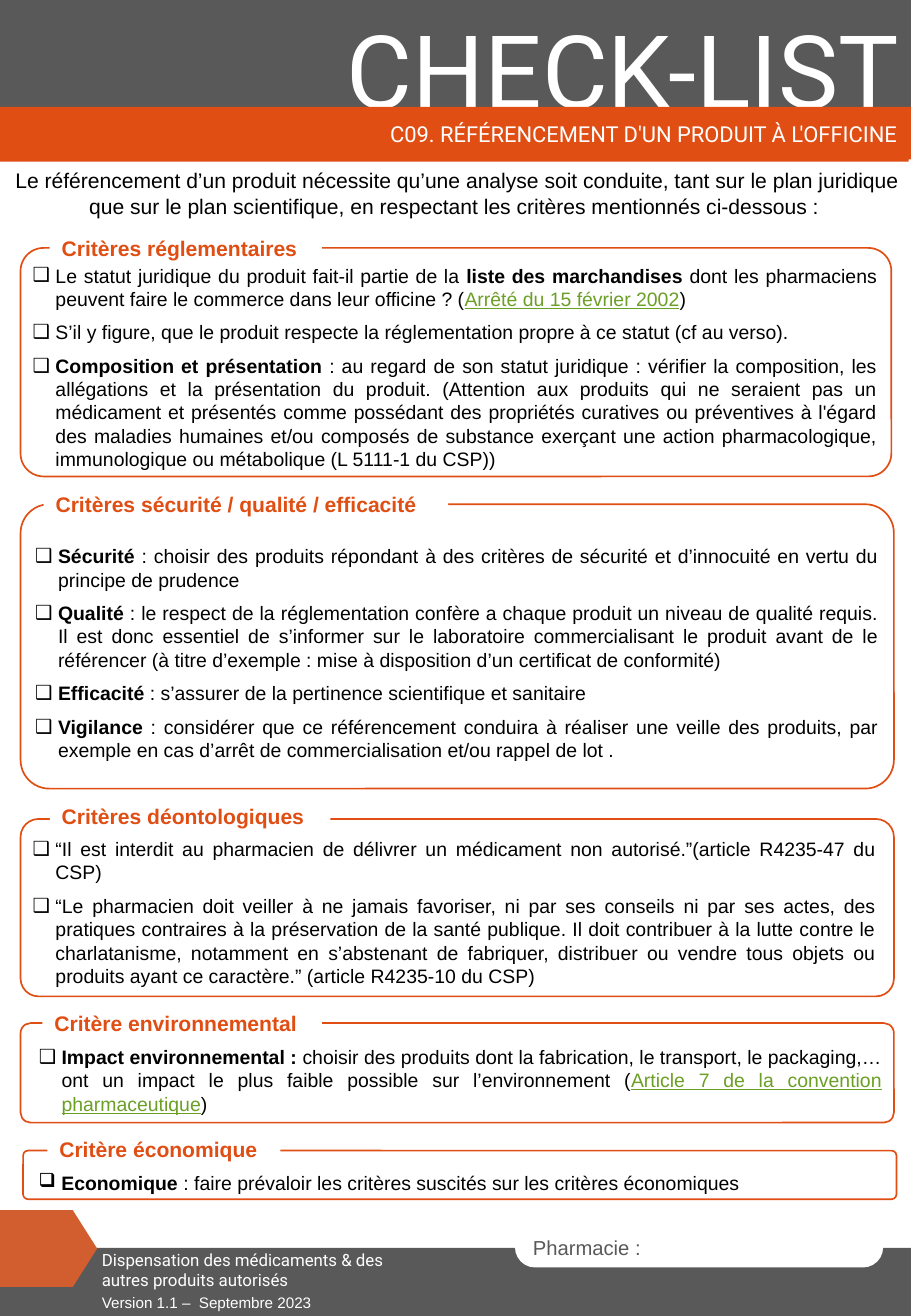
import pptx
import pptx.dml.color
import pptx.enum.shapes
import pptx.enum.text
import pptx.util
from pptx.oxml.xmlchemy import OxmlElement

Pt = pptx.util.Pt
SHAPE = pptx.enum.shapes.MSO_SHAPE
ALIGN = pptx.enum.text.PP_ALIGN
ANCHOR = pptx.enum.text.MSO_ANCHOR
COLORS = {"grey": "595959", "orange": "E04E13", "rust": "D25E2F",
          "white": "FFFFFF", "black": "000000", "green": "6B9F25"}
ITEM = {"name": "Arial", "size": Pt(11.5), "bold": False, "color": "black"}
FORMATS = {
    "plain": ITEM,
    "bold": {**ITEM, "bold": True},
    "link": {**ITEM, "underline": True, "color": "green"},
    "heading": {"name": "Arial", "size": Pt(12.5), "bold": True, "color": "orange"},
    "intro": {"name": "Arial", "size": Pt(12.5), "color": "black"},
    "banner": {"name": "Roboto", "size": Pt(60), "color": "white"},
    "title": {"name": "Roboto", "size": Pt(13), "bold": False, "color": "white"},
    "pharmacy": {"name": "Arial", "size": Pt(12), "color": "grey"},
    "theme": {"name": "Roboto", "size": Pt(10), "color": "white"},
    "version": {"name": "Arial", "size": Pt(9), "color": "white"},
}


def rgb(name):
    return pptx.dml.color.RGBColor.from_string(COLORS[name])


def add_run(p, text, style):
    """Append text to the paragraph in one of the FORMATS."""
    r = p.add_run()
    r.text = text
    for key, value in FORMATS[style].items():
        if key == "color":
            r.font.color.rgb = rgb(value)
        else:
            setattr(r.font, key, value)


prs = pptx.Presentation()
prs.slide_width, prs.slide_height = Pt(540), Pt(779.76)
s = prs.slides.add_slide(prs.slide_layouts.get_by_name("Comparison"))
title, *list_boxes = s.placeholders

# Header and footer blocks
blocks = [
    (SHAPE.RECTANGLE, (0, 739.4, 540, 40.36), "grey", None),
    (SHAPE.ROUNDED_RECTANGLE, (305.3, 727.2, 218.2, 23.8), "white", 0.5),
    (SHAPE.RECTANGLE, (0, 0, 540, 63.4), "grey", None),
    (SHAPE.PENTAGON, (0, 717.1, 57.6, 45.4), "rust", 0.317),
]
for kind, box, color, adjustment in blocks:
    sp = s.shapes.add_shape(kind, *map(Pt, box))
    sp.shadow.inherit = False
    sp.fill.solid()
    sp.fill.fore_color.rgb = rgb(color)
    sp.line.fill.background()
    if adjustment is not None:
        sp.adjustments[0] = adjustment
    if color == "white":
        p = sp.text_frame.paragraphs[0]
        p.alignment = ALIGN.LEFT
        add_run(p, "Pharmacie :", "pharmacy")

texts = [
    ("CHECK-LIST", "banner", (164.2, 0.7, 375.8, 79.9), ALIGN.RIGHT),
    ("Dispensation des médicaments & des autres produits autorisés", "theme",
     (53.3, 736.6, 182.2, 31.7), ALIGN.LEFT),
    ("Version 1.1 –  Septembre 2023", "version", (53.3, 762.5, 423.4, 18), ALIGN.LEFT),
    ("Le référencement d’un produit nécessite qu’une analyse soit conduite, tant sur le plan "
     "juridique que sur le plan scientifique, en respectant les critères mentionnés ci-dessous : ",
     "intro", (1.4, 95.8, 538.6, 38.9), ALIGN.CENTER),
]
for text, style, box, alignment in texts:
    sp = s.shapes.add_textbox(*map(Pt, box))
    tf = sp.text_frame
    tf.word_wrap = style != "banner"
    p = tf.paragraphs[0]
    p.alignment = alignment
    add_run(p, text, style)

# Title on its orange band, in front of the banner
band = s.shapes.add_shape(SHAPE.RECTANGLE, 0, Pt(63.4), Pt(540), Pt(31))
band.shadow.inherit = False
band.line.fill.background()
title.left, title.top, title.width, title.height = map(Pt, (0, 64.8, 538.6, 31))
title.element.getparent().append(title.element)
for sp in (band, title):
    sp.fill.solid()
    sp.fill.fore_color.rgb = rgb("orange")
tf = title.text_frame
tf.auto_size = pptx.enum.text.MSO_AUTO_SIZE.NONE
tf.vertical_anchor = ANCHOR.MIDDLE
p = tf.paragraphs[0]
p.alignment = ALIGN.RIGHT
p.line_spacing = 0.9
add_run(p, "C09. RÉFÉRENCEMENT D'UN PRODUIT À L'OFFICINE", "title")

# Each card: heading, heading (left, top, width), frame box, list box, items
cards = [
    ("Critères réglementaires", (29.5, 135.4, 161.3),
     (12.2, 146.9, 516.2, 135.4), (12.2, 152.6, 514.8, 135.4), [
        [("Le statut juridique du produit fait-il partie de la ", "plain"),
         ("liste des marchandises ", "bold"),
         ("dont les pharmaciens peuvent faire le commerce dans leur officine ? (", "plain"),
         ("Arrêté du 15 février 2002", "link"), (")", "plain")],
        [("S’il y figure, que le produit respecte la réglementation propre à ce statut "
          "(cf au verso).", "plain")],
        [("Composition et présentation", "bold"),
         (" : au regard de son statut juridique : vérifier la composition, les allégations et la "
          "présentation du produit. (Attention aux produits qui ne seraient pas un médicament et "
          "présentés comme possédant des propriétés curatives ou préventives à l'égard des "
          "maladies humaines et/ou composés de substance exerçant une action pharmacologique, "
          "immunologique ou métabolique (L 5111-1 du CSP))", "plain")]]),
    ("Critères sécurité / qualité / efficacité", (25.9, 287.3, 239.8),
     (12.2, 298.8, 517.7, 168.5), (13.7, 319, 514.1, 136.8), [
        [("Sécurité ", "bold"),
         (": choisir des produits répondant à des critères de sécurité et d’innocuité en vertu "
          "du principe de prudence", "plain")],
        [("Qualité", "bold"),
         (" : le respect de la réglementation confère a chaque produit un niveau de qualité "
          "requis. Il est donc essentiel de s’informer sur le laboratoire commercialisant le "
          "produit avant de le référencer (à titre d’exemple : mise à disposition d’un "
          "certificat de conformité)", "plain")],
        [("Efficacité ", "bold"),
         (": s’assurer de la pertinence scientifique et sanitaire", "plain")],
        [("Vigilance", "bold"),
         (" : considérer que ce référencement conduira à réaliser une veille des produits, par "
          "exemple en cas d’arrêt de commercialisation et/ou rappel de lot .", "plain")]]),
    ("Critères déontologiques", (29.5, 472.3, 166.3),
     (12.2, 485.3, 517.7, 105.1), (12.2, 492.5, 514.1, 100.8), [
        [("“Il est interdit au pharmacien de délivrer un médicament non autorisé.”"
          "(article R4235-47 du CSP) ", "plain")],
        [("“Le pharmacien doit veiller à ne jamais favoriser, ni par ses conseils ni par ses "
          "actes, des pratiques contraires à la préservation de la santé publique. Il doit "
          "contribuer à la lutte contre le charlatanisme, notamment en s’abstenant de fabriquer, "
          "distribuer ou vendre tous objets ou produits ayant ce caractère.” "
          "(article R4235-10 du CSP)", "plain")]]),
    ("Critère environnemental", (25.2, 594.7, 165.6),
     (12.2, 606.2, 517.7, 59), (15.8, 615.6, 514.1, 51.1), [
        [("Impact environnemental : ", "bold"),
         ("choisir des produits dont la fabrication, le transport, le packaging,… ont un impact "
          "le plus faible possible sur l’environnement (", "plain"),
         ("Article 7 de la convention pharmaceutique", "link"), (")", "plain")]]),
    ("Critère économique", (28.1, 669.6, 138.2),
     (13.7, 681.8, 517.7, 28.8), (15.8, 690.5, 514.1, 21.6), [
        [("Economique ", "bold"),
         (": faire prévaloir les critères suscités sur les critères économiques", "plain")]]),
]
# The layout holds four lists; the fifth takes a text box
list_boxes.append(s.shapes.add_textbox(0, 0, 0, 0))

for (heading, label_box, frame_box, list_box, items), body in zip(cards, list_boxes):
    frame = s.shapes.add_shape(SHAPE.ROUNDED_RECTANGLE, *map(Pt, frame_box))
    frame.shadow.inherit = False
    frame.adjustments[0] = 0.101
    frame.fill.background()
    frame.line.color.rgb = rgb("orange")
    frame.line.width = Pt(1)

    label = s.shapes.add_shape(SHAPE.RECTANGLE, *map(Pt, label_box), Pt(23))
    label.shadow.inherit = False
    label.fill.solid()
    label.fill.fore_color.rgb = rgb("white")
    label.line.fill.background()
    p = label.text_frame.paragraphs[0]
    p.alignment = ALIGN.LEFT
    add_run(p, heading, "heading")

    body.left, body.top, body.width, body.height = map(Pt, list_box)
    tf = body.text_frame
    tf.word_wrap = True
    tf.auto_size = pptx.enum.text.MSO_AUTO_SIZE.NONE
    tf.vertical_anchor = ANCHOR.TOP
    for i, item in enumerate(items):
        p = tf.add_paragraph() if i else tf.paragraphs[0]
        p.alignment = ALIGN.JUSTIFY
        p.space_before = Pt(6 if i else 0)
        pPr = p._p.get_or_add_pPr()
        pPr.set("marL", str(Pt(13.5)))
        pPr.set("indent", str(-Pt(13.5)))
        bullet = OxmlElement("a:buChar")
        bullet.set("char", "❑")
        pPr.append(bullet)
        for text, style in item:
            add_run(p, text, style)

prs.save("out.pptx")
